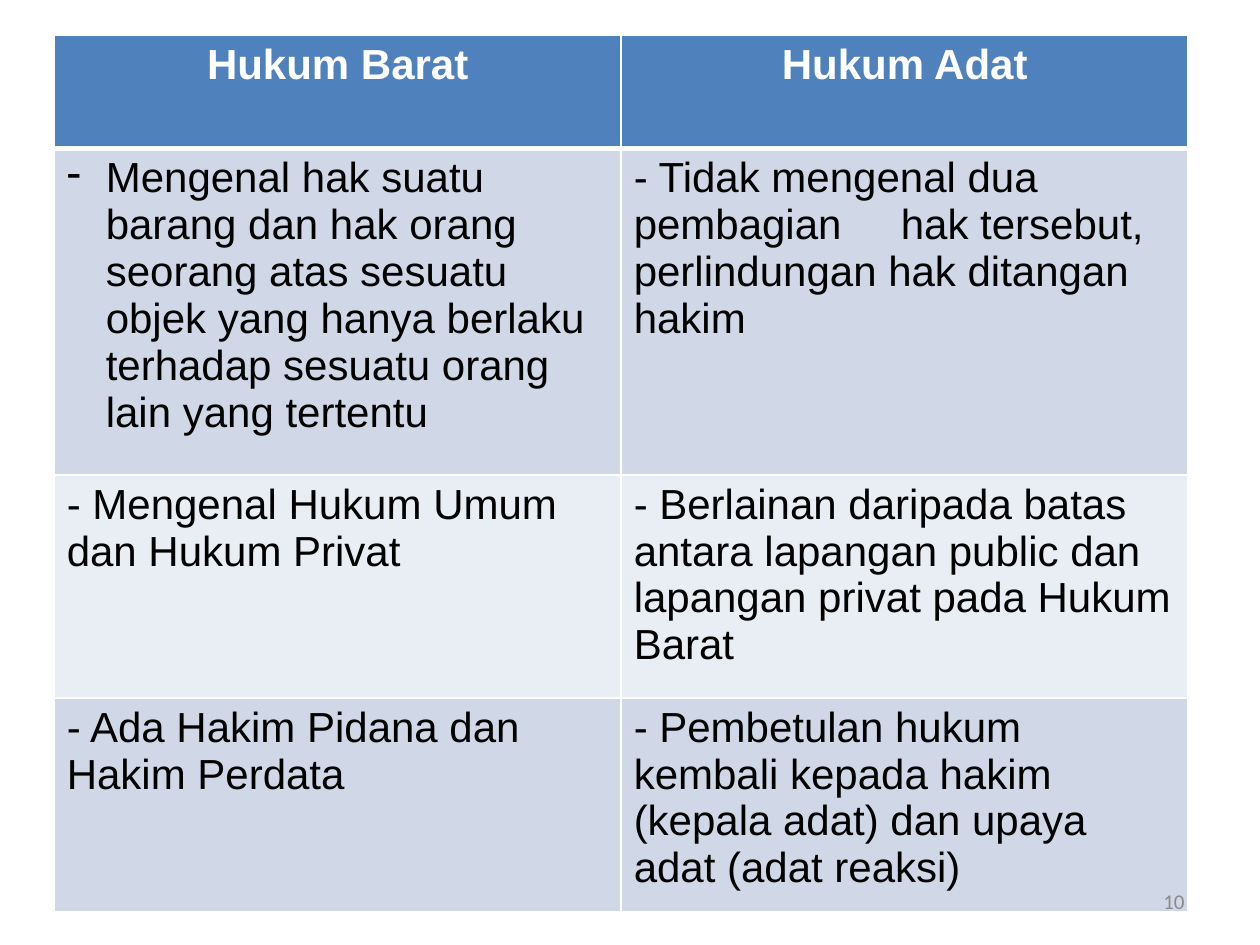
from dataclasses import dataclass

from lxml.etree import SubElement
from pptx import Presentation
from pptx.dml.color import RGBColor as RGB
from pptx.enum.text import MSO_ANCHOR as Anchor, PP_ALIGN as Align
from pptx.oxml.ns import qn
from pptx.util import Inches, Pt


@dataclass(frozen=True)
class Theme:
    header: str = "4F81BD"
    bands: tuple = ("D0D8E8", "E9EDF4")
    border: str = "FFFFFF"
    header_text: str = "FFFFFF"
    body_text: str = "000000"
    muted: str = "898989"
    table_font: str = "Arial"
    number_font: str = "Calibri"
    table_size: int = 24
    number_size: int = 12
    thin: int = 1
    thick: int = 3


class SlideBuilder:
    def __init__(self, slide, theme):
        self.slide = slide
        self.theme = theme

    def add_text(self, paragraph, text, color, align=Align.LEFT, **formats):
        paragraph.alignment = align
        run = paragraph.add_run()
        run.text = text
        for name, value in formats.items():
            setattr(run.font, name, value)
        run.font.color.rgb = RGB.from_string(color)

    def borders(self, cell, bottom):
        props = cell._tc.get_or_add_tcPr()
        for place, side in enumerate("LRTB"):
            width = bottom if side == "B" else self.theme.thin
            line = SubElement(props, qn(f"a:ln{side}"), w=str(Pt(width)))
            paint = SubElement(line, qn("a:solidFill"))
            SubElement(paint, qn("a:srgbClr"), val=self.theme.border)
            props.insert(place, line)

    def dash_bullet(self, paragraph, indent):
        props = paragraph._p.get_or_add_pPr()
        props.set("marL", str(Inches(indent)))
        props.set("indent", str(-Inches(indent)))
        SubElement(props, qn("a:buChar"), char="-")

    def tab_stop(self, paragraph, position):
        stops = SubElement(paragraph._p.get_or_add_pPr(), qn("a:tabLst"))
        SubElement(stops, qn("a:tab"), pos=str(Inches(position)), algn="l")

    def table(self, left, top, column_width, heights, rows):
        theme = self.theme
        frame = self.slide.shapes.add_table(
            len(rows), len(rows[0]), Inches(left), Inches(top),
            Inches(column_width * len(rows[0])), Inches(sum(heights)))
        grid = frame.table
        for column in grid.columns:
            column.width = Inches(column_width)
        for r, (height, texts) in enumerate(zip(heights, rows)):
            grid.rows[r].height = Inches(height)
            is_header = r == 0
            fill = theme.header if is_header else theme.bands[(r - 1) % 2]
            for c, text in enumerate(texts):
                cell = grid.cell(r, c)
                cell.fill.solid()
                cell.fill.fore_color.rgb = RGB.from_string(fill)
                self.borders(cell, theme.thick if is_header else theme.thin)
                self.add_text(
                    cell.text_frame.paragraphs[0], text,
                    theme.header_text if is_header else theme.body_text,
                    Align.CENTER if is_header else Align.LEFT,
                    name=theme.table_font, size=Pt(theme.table_size), bold=is_header)
        return grid

    def page_number(self, text, left, top, width, height):
        box = self.slide.shapes.add_textbox(*map(Inches, (left, top, width, height)))
        frame = box.text_frame
        for name, value in {"word_wrap": True, "vertical_anchor": Anchor.MIDDLE}.items():
            setattr(frame, name, value)
        self.add_text(frame.paragraphs[0], text, self.theme.muted, Align.RIGHT,
                      name=self.theme.number_font, size=Pt(self.theme.number_size))


COMPARISON = [
    ("Hukum Barat", "Hukum Adat"),
    ("Mengenal hak suatu barang dan hak orang seorang atas sesuatu objek yang "
     "hanya berlaku terhadap sesuatu orang lain yang tertentu",
     "- Tidak mengenal dua pembagian\thak tersebut, perlindungan hak ditangan hakim"),
    ("- Mengenal Hukum Umum dan Hukum Privat",
     "- Berlainan daripada batas antara lapangan public dan lapangan privat "
     "pada Hukum Barat"),
    ("- Ada Hakim Pidana dan Hakim Perdata",
     "- Pembetulan hukum kembali kepada hakim (kepala adat) dan upaya adat "
     "(adat reaksi)"),
]


def main():
    deck = Presentation()
    deck.slide_width, deck.slide_height = Inches(10), Inches(7.5)
    builder = SlideBuilder(deck.slides.add_slide(deck.slide_layouts[6]), Theme())
    comparison = builder.table(0.43, 0.28, 4.5, (0.9, 2.59, 1.77, 1.7), COMPARISON)
    western_rights, adat_rights = (
        comparison.cell(1, c).text_frame.paragraphs[0] for c in range(2))
    builder.dash_bullet(western_rights, 0.31)
    builder.tab_stop(adat_rights, 2.12)
    builder.page_number("10", 7.17, 6.95, 2.33, 0.4)
    deck.save("out.pptx")


if __name__ == "__main__":
    main()
